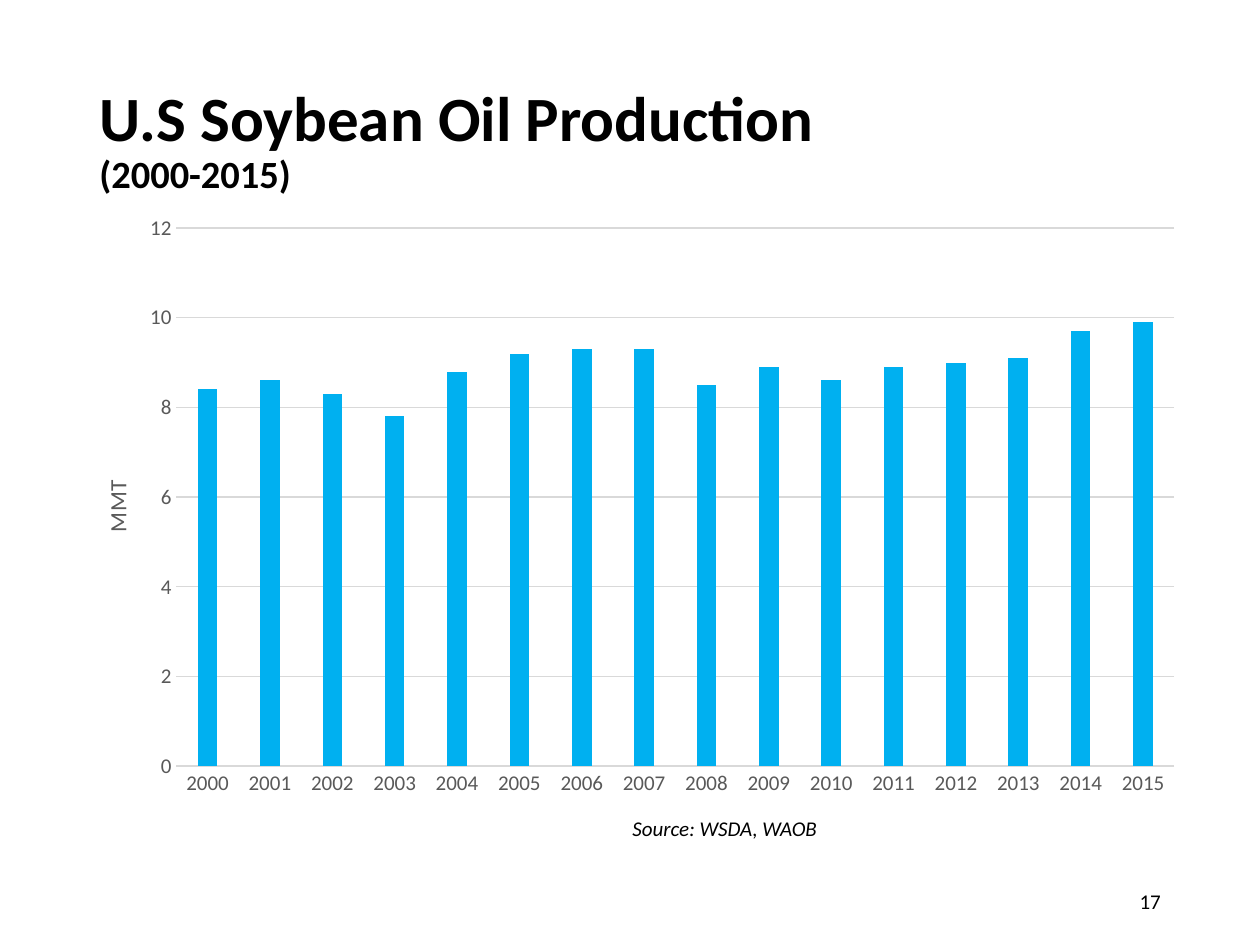
from lxml import etree
from pptx import Presentation
from pptx.chart.data import CategoryChartData
from pptx.dml.color import RGBColor
from pptx.enum.chart import XL_CHART_TYPE, XL_TICK_MARK
from pptx.enum.text import MSO_ANCHOR, PP_ALIGN
from pptx.oxml import parse_xml
from pptx.oxml.ns import nsdecls
from pptx.util import Cm, Pt

COLUMNS = XL_CHART_TYPE.COLUMN_CLUSTERED
NO_TICK = XL_TICK_MARK.NONE
TOP, MIDDLE = MSO_ANCHOR.TOP, MSO_ANCHOR.MIDDLE
LEFT, RIGHT = PP_ALIGN.LEFT, PP_ALIGN.RIGHT

BLACK = RGBColor(0x00, 0x00, 0x00)
GRAY = RGBColor(0x59, 0x59, 0x59)
GRID = RGBColor(0xD9, 0xD9, 0xD9)
BLUE = RGBColor(0x00, 0xB0, 0xF0)

PRODUCTION = [8.4, 8.6, 8.3, 7.8, 8.8, 9.2, 9.3, 9.3,
              8.5, 8.9, 8.6, 8.9, 9, 9.1, 9.7, 9.9]
YEARS = [str(2000 + i) for i in range(len(PRODUCTION))]


def set_font(font, color=BLACK, **formats):
    for name, value in {"name": "Calibri", **formats}.items():
        setattr(font, name, value)
    font.color.rgb = color


def manual_layout(**fractions):
    """Chart layout element; positions and sizes are fractions of the chart."""
    layout = parse_xml(f"<c:layout {nsdecls('c')}><c:manualLayout/></c:layout>")
    manual = layout[0]
    ns = etree.QName(manual).namespace

    def add(tag, value):
        etree.SubElement(manual, f"{{{ns}}}{tag}").set("val", str(value))

    if "w" in fractions:
        add("layoutTarget", "inner")
    add("xMode", "edge")
    add("yMode", "edge")
    for tag, value in fractions.items():
        add(tag, value)
    return layout


class SlideBuilder:
    def __init__(self, prs):
        self.s = prs.slides.add_slide(prs.slide_layouts[5])

    def title(self, box, lines):
        sp = self.s.shapes.title
        sp.left, sp.top, sp.width, sp.height = (Cm(v) for v in box)
        tf = sp.text_frame
        tf.word_wrap = True
        tf.vertical_anchor = MIDDLE
        p = tf.paragraphs[0]
        p.alignment = LEFT
        p.line_spacing = 0.9
        for i, (text, size) in enumerate(lines):
            if i:
                p.add_line_break()
            r = p.add_run()
            r.text = text
            set_font(r.font, size=Pt(size), bold=True)

    def text(self, box, text, align=LEFT, anchor=TOP, **formats):
        tf = self.s.shapes.add_textbox(*(Cm(v) for v in box)).text_frame
        tf.word_wrap = True
        tf.vertical_anchor = anchor
        p = tf.paragraphs[0]
        p.alignment = align
        r = p.add_run()
        r.text = text
        set_font(r.font, size=Pt(12), **formats)

    def column_chart(self, box, categories, values, axis_title):
        data = CategoryChartData()
        data.categories = categories
        data.add_series("Series 1", values)
        chart = self.s.shapes.add_chart(
            COLUMNS, *(Cm(v) for v in box), data).chart
        chart.has_legend = False
        chart.has_title = False
        set_font(chart.font, size=Pt(10))

        # Columns
        plot = chart.plots[0]
        plot.gap_width, plot.overlap = 219, -27
        plot.vary_by_categories = False
        fill = plot.series[0].format.fill
        fill.solid()
        fill.fore_color.rgb = BLUE

        # Axes and gridlines
        cat, val = chart.category_axis, chart.value_axis
        for axis in (cat, val):
            axis.major_tick_mark = axis.minor_tick_mark = NO_TICK
            set_font(axis.tick_labels.font, GRAY, size=Pt(12))
        val.minimum_scale, val.maximum_scale, val.major_unit = 0, 12, 2
        val.has_major_gridlines = True
        for line in (cat.format.line, val.major_gridlines.format.line):
            line.color.rgb = GRID
            line.width = Pt(0.75)
        val.format.line.fill.background()

        # Axis title
        title = val.axis_title
        p = title.text_frame.paragraphs[0]
        r = p.add_run()
        r.text = axis_title
        set_font(r.font, GRAY, size=Pt(13.3), bold=False)

        # Placement inside the chart
        area = plot._element.getparent()
        for old in area.findall("c:layout", area.nsmap):
            area.remove(old)
        area.insert(0, manual_layout(x=0.1, y=0.04, w=0.88, h=0.89))
        element = title._element
        for old in element.findall("c:layout", element.nsmap):
            element.remove(old)
        element.find("c:tx", element.nsmap).addnext(
            manual_layout(x=0.03, y=0.45))


def main():
    prs = Presentation()
    prs.slide_width, prs.slide_height = Cm(25.4), Cm(19.05)
    slide = SlideBuilder(prs)
    slide.title((1.75, 1.02, 21.9, 3.68),
                [("U.S Soybean Oil Production", 36), ("(2000-2015)", 22)])
    slide.column_chart((1.27, 4.11, 22.86, 12.19), YEARS, PRODUCTION, "MMT")
    slide.text((17.93, 17.65, 5.72, 1.02), "17", RIGHT, MIDDLE)
    slide.text((12.5, 16.31, 5.28, 0.76), "Source: WSDA, WAOB", italic=True)
    prs.save("out.pptx")


if __name__ == "__main__":
    main()
